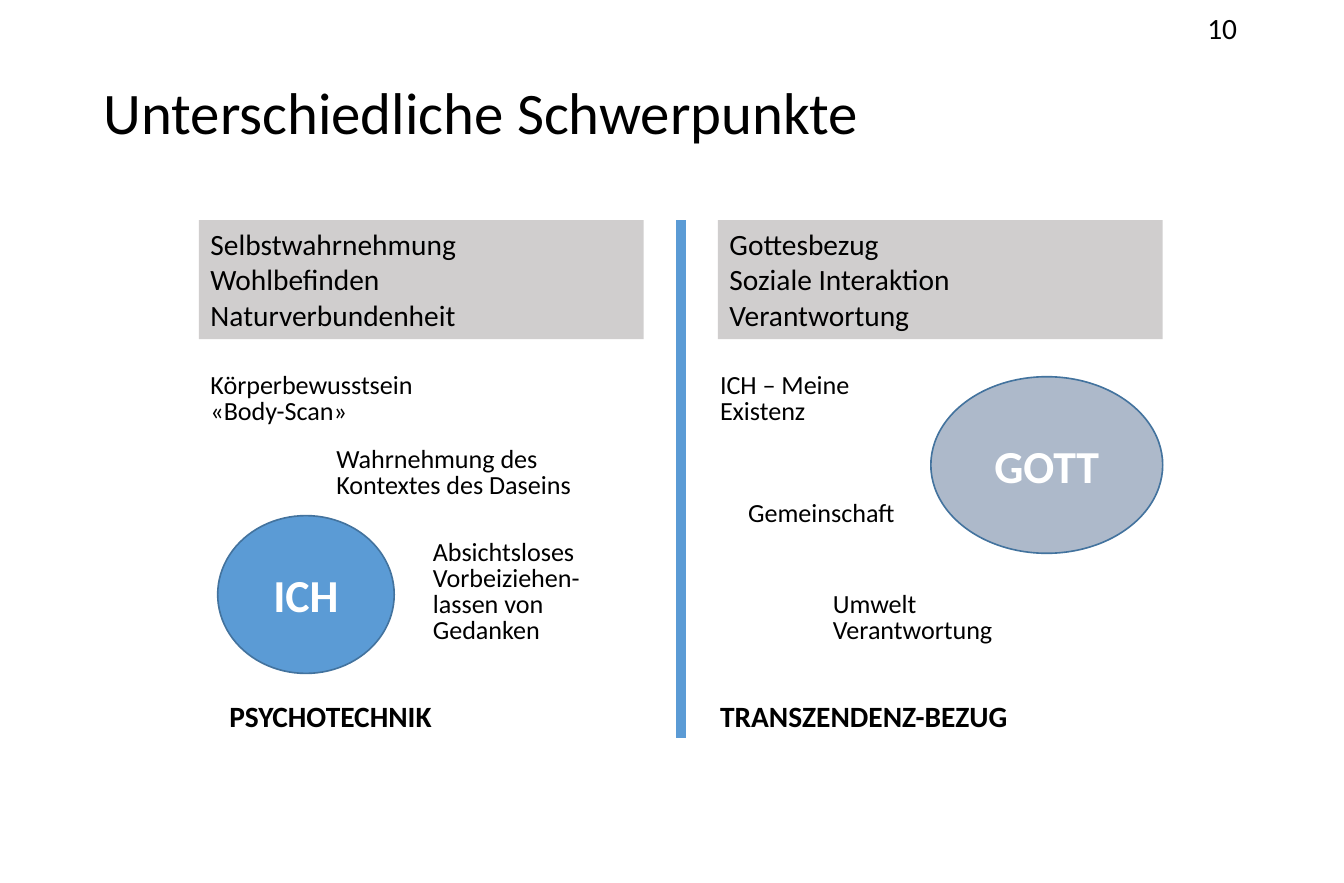
from dataclasses import dataclass

from lxml.etree import SubElement
from pptx import Presentation
from pptx.dml.color import RGBColor
from pptx.enum.shapes import MSO_CONNECTOR, MSO_SHAPE
from pptx.enum.text import MSO_ANCHOR, MSO_AUTO_SIZE, PP_ALIGN
from pptx.oxml.ns import qn
from pptx.util import Inches, Pt

TITLE = "Unterschiedliche Schwerpunkte"
PAGE_NUMBER = "10"

# Boxes are (left, top, width, height) in inches; "\n" is a line break.
PANELS = [
    (1.69, ["Selbstwahrnehmung", "Wohlbefinden", "Naturverbundenheit"]),
    (6.1, ["Gottesbezug", "Soziale Interaktion", "Verantwortung"]),
]
NOTES = [
    ((1.69, 3.12, 2.83, 0.55), ["Körperbewusstsein", "«Body-Scan»"]),
    ((2.76, 3.75, 2.83, 0.55), ["Wahrnehmung des\nKontextes des Daseins"]),
    ((3.58, 4.54, 1.81, 1), ["Absichtsloses\nVorbeiziehen-lassen von Gedanken"]),
    ((6.02, 3.12, 1.57, 0.55), ["ICH – Meine\nExistenz"]),
    ((6.26, 4.21, 1.57, 0.33), ["Gemeinschaft"]),
    ((6.98, 4.98, 1.57, 0.55), ["Umwelt", "Verantwortung"]),
]
CONCLUSIONS = [(1.85, "PSYCHOTECHNIK"), (6.02, "TRANSZENDENZ-BEZUG")]

PANEL_TOP, PANEL_WIDTH, PANEL_HEIGHT = 1.87, 3.78, 1.01
CONCLUSION_TOP, CONCLUSION_WIDTH, CONCLUSION_HEIGHT = 5.88, 3.46, 0.4
DIVIDER_X, DIVIDER_BOTTOM = 5.79, 6.27


@dataclass(frozen=True)
class Theme:
    font: str = "Calibri"
    text: RGBColor = RGBColor(0, 0, 0)
    inverse: RGBColor = RGBColor(0xFF, 0xFF, 0xFF)
    accent: RGBColor = RGBColor(0x5B, 0x9B, 0xD5)
    outline: RGBColor = RGBColor(0x43, 0x73, 0x9E)
    muted: RGBColor = RGBColor(0xAD, 0xB9, 0xCA)
    panel: RGBColor = RGBColor(0xD0, 0xCE, 0xCE)
    title_size: int = 36
    circle_size: int = 28
    body_size: int = 18
    note_size: int = 16


THEME = Theme()
CIRCLES = [
    ((1.85, 4.38, 1.5, 1.34), "ICH", THEME.accent),
    ((7.91, 3.2, 1.97, 1.5), "GOTT", THEME.muted),
]


def write(shape, paragraphs, size, color=THEME.text, bold=False,
          align=PP_ALIGN.LEFT, anchor=MSO_ANCHOR.TOP, spacing=None):
    frame = shape.text_frame
    frame.word_wrap = True
    frame.auto_size = MSO_AUTO_SIZE.NONE
    frame.vertical_anchor = anchor
    for index, text in enumerate(paragraphs):
        paragraph = frame.add_paragraph() if index else frame.paragraphs[0]
        paragraph.alignment = align
        paragraph.line_spacing = spacing
        for line_index, line in enumerate(text.split("\n")):
            if line_index:
                paragraph.add_line_break()
            run = paragraph.add_run()
            run.text = line
            run.font.name = THEME.font
            run.font.size = Pt(size)
            run.font.bold = bold
            run.font.color.rgb = color


def add_text(slide, box, paragraphs, size, **style):
    write(slide.shapes.add_textbox(*map(Inches, box)), paragraphs, size, **style)


def add_filled(slide, kind, box, fill, outline=None):
    shape = slide.shapes.add_shape(kind, *map(Inches, box))
    shape.shadow.inherit = False
    shape.fill.solid()
    shape.fill.fore_color.rgb = fill
    if outline is None:
        shape.line.fill.background()
    else:
        shape.line.color.rgb = outline
        shape.line.width = Pt(1)
    return shape


def add_title(slide):
    title = slide.shapes.title
    title.left, title.top = Inches(0.78), Inches(0.57)
    title.width, title.height = Inches(9.85), Inches(0.82)
    write(title, [TITLE], THEME.title_size, anchor=MSO_ANCHOR.MIDDLE, spacing=0.9)


def add_divider(slide):
    divider = slide.shapes.add_connector(
        MSO_CONNECTOR.STRAIGHT, Inches(DIVIDER_X), Inches(PANEL_TOP),
        Inches(DIVIDER_X), Inches(DIVIDER_BOTTOM))
    divider.line.color.rgb = THEME.accent
    divider.line.width = Pt(6)
    SubElement(divider._element.spPr, qn("a:effectLst"))


def main():
    presentation = Presentation()
    presentation.slide_width, presentation.slide_height = Inches(11.42), Inches(7.5)
    slide = presentation.slides.add_slide(
        presentation.slide_layouts.get_by_name("Title Only"))

    add_title(slide)
    add_text(slide, (10.16, 0.04, 0.61, 0.4), [PAGE_NUMBER], THEME.body_size)
    add_divider(slide)
    for box, label, fill in CIRCLES:
        circle = add_filled(slide, MSO_SHAPE.OVAL, box, fill, THEME.outline)
        write(circle, [label], THEME.circle_size, THEME.inverse, bold=True,
              align=PP_ALIGN.CENTER, anchor=MSO_ANCHOR.MIDDLE)
    for left, topics in PANELS:
        box = (left, PANEL_TOP, PANEL_WIDTH, PANEL_HEIGHT)
        panel = add_filled(slide, MSO_SHAPE.RECTANGLE, box, THEME.panel)
        write(panel, topics, THEME.body_size)
    for box, paragraphs in NOTES:
        add_text(slide, box, paragraphs, THEME.note_size, spacing=Pt(16))
    for left, label in CONCLUSIONS:
        box = (left, CONCLUSION_TOP, CONCLUSION_WIDTH, CONCLUSION_HEIGHT)
        add_text(slide, box, [label], THEME.body_size, bold=True)

    presentation.save("out.pptx")


if __name__ == "__main__":
    main()
